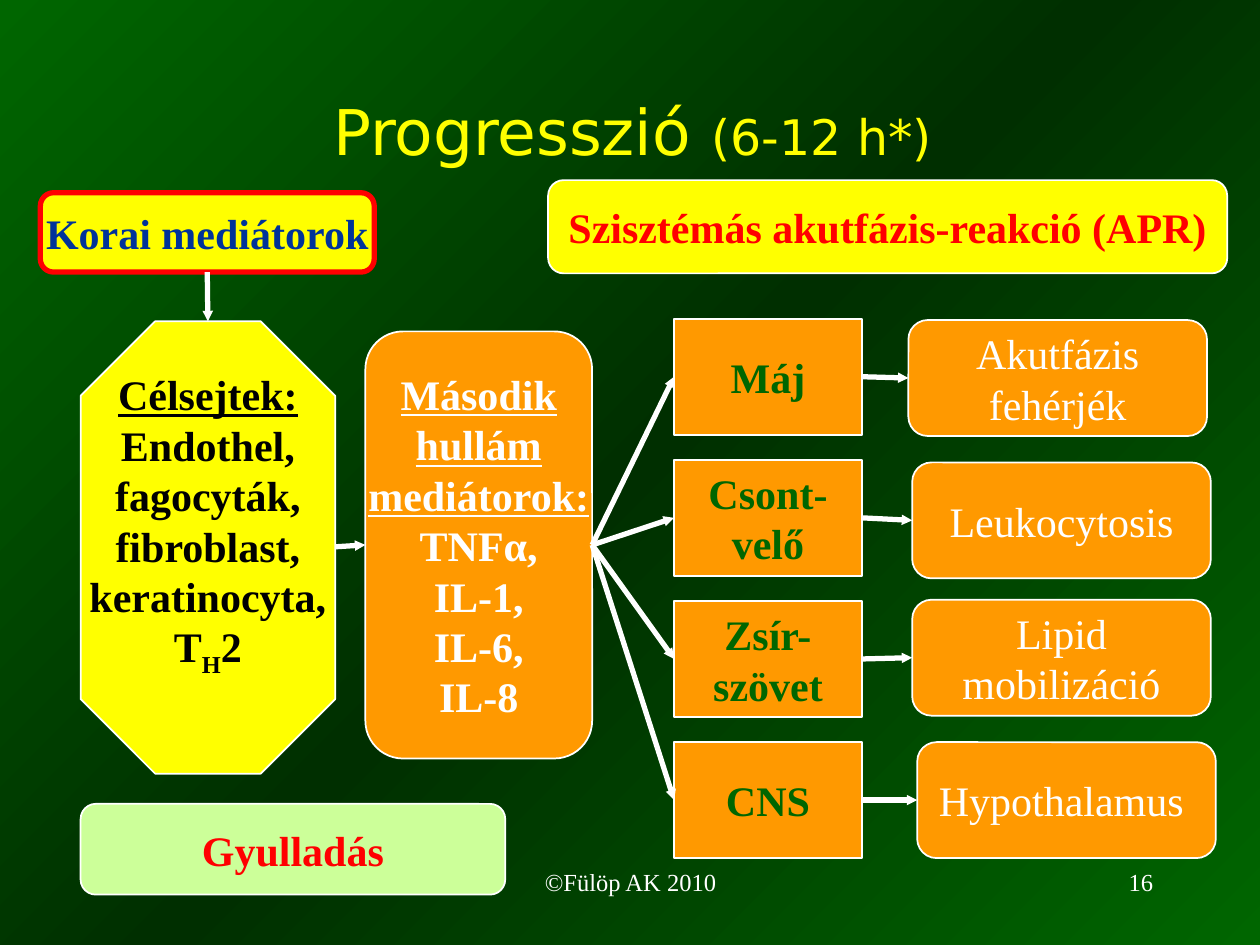
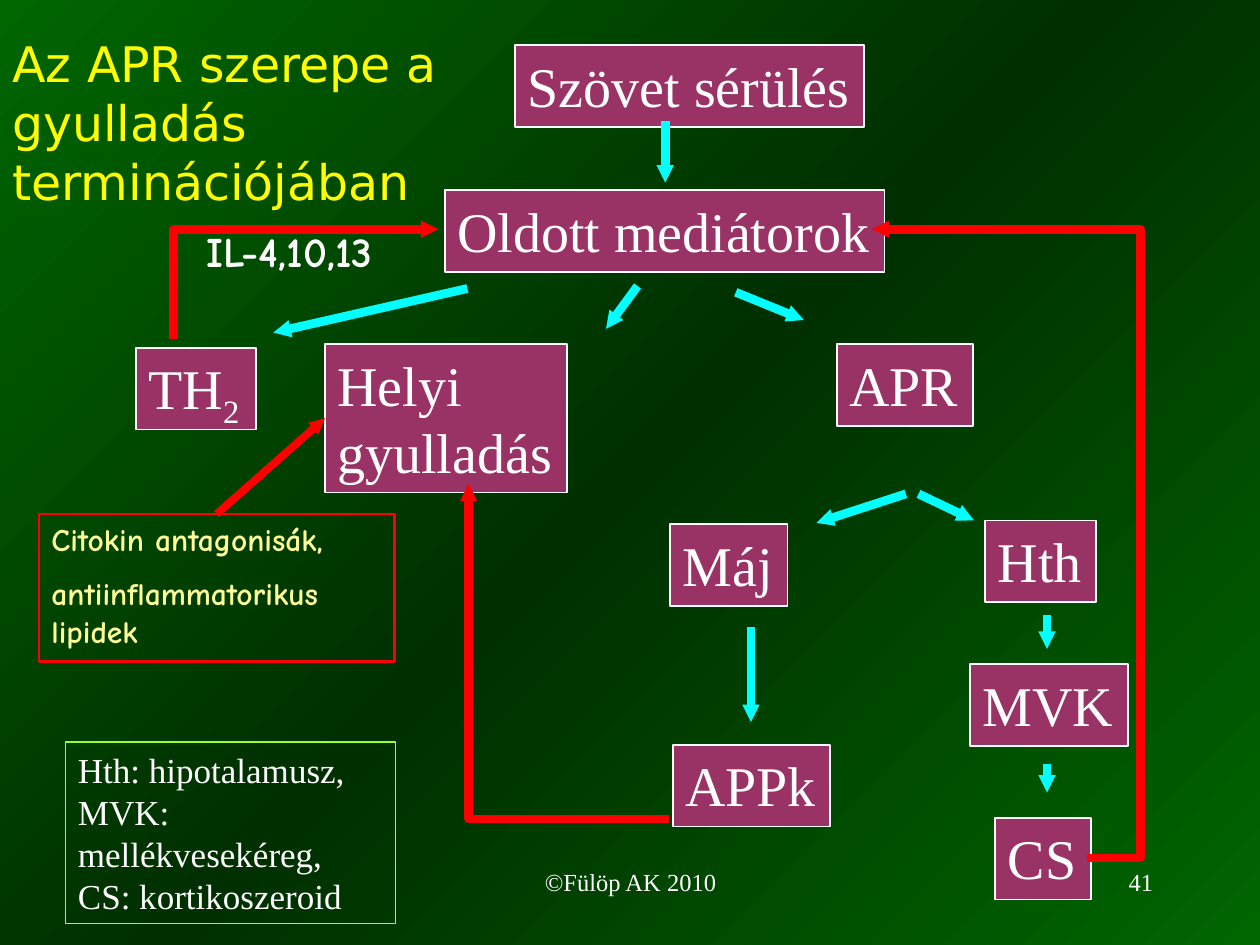
"""Build two slides on the progression and termination of the acute phase reaction."""
from copy import deepcopy
from dataclasses import dataclass, replace

from pptx import Presentation
from pptx.dml.color import RGBColor
from pptx.enum.shapes import MSO_CONNECTOR, MSO_SHAPE
from pptx.enum.text import MSO_ANCHOR, MSO_AUTO_SIZE, PP_ALIGN
from pptx.oxml.ns import qn
from pptx.oxml.xmlchemy import OxmlElement
from pptx.util import Emu, Pt

RECT, ROUND, OCTAGON = MSO_SHAPE.RECTANGLE, MSO_SHAPE.ROUNDED_RECTANGLE, MSO_SHAPE.OCTAGON
STRAIGHT, ELBOW = MSO_CONNECTOR.STRAIGHT, MSO_CONNECTOR.ELBOW
LEFT_ALIGN, CENTER, RIGHT_ALIGN = PP_ALIGN.LEFT, PP_ALIGN.CENTER, PP_ALIGN.RIGHT
TOP_ANCHOR, MIDDLE = MSO_ANCHOR.TOP, MSO_ANCHOR.MIDDLE
FIT, FIXED = MSO_AUTO_SIZE.SHAPE_TO_FIT_TEXT, MSO_AUTO_SIZE.NONE
TOP, LEFT, BOTTOM, RIGHT = range(4)
EMU_PER_PX = 9144


@dataclass(frozen=True)
class Theme:
    """Colours, fonts and type sizes of the deck."""
    green: str = "006600"
    dark_green: str = "002F00"
    yellow: str = "FFFF00"
    pale_yellow: str = "FFFF99"
    orange: str = "FF9900"
    plum: str = "993366"
    lime: str = "99FF33"
    pale_lime: str = "CCFF99"
    red: str = "FF0000"
    blue: str = "003399"
    cyan: str = "00FFFF"
    white: str = "FFFFFF"
    black: str = "000000"
    serif: str = "Times New Roman"
    sans: str = "DejaVu Sans"
    comic: str = "Comic Neue"
    title: int = 36
    subtitle: int = 28
    node: int = 32
    body: int = 24
    legend: int = 20
    note: int = 18
    footer: int = 14


THEME = Theme()


@dataclass(frozen=True)
class Style:
    """Look of a box and of the text in it."""
    size: int = THEME.body
    color: str = THEME.white
    font: str = THEME.serif
    bold: bool = False
    fill: str | None = None
    line: str | None = None
    width: float = 1
    align: PP_ALIGN = CENTER
    anchor: MSO_ANCHOR = MIDDLE
    wrap: bool = False
    fit: bool = False
    space_before: int = 0


@dataclass(frozen=True)
class Span:
    """Piece of a line with its own size or a lowered baseline."""
    text: str
    size: int | None = None
    lowered: bool = False


@dataclass(frozen=True)
class Box:
    """Text in a shape, or in a plain text box when shape is None."""
    left: int
    top: int
    width: int
    height: int
    lines: tuple
    style: Style
    shape: MSO_SHAPE | None = RECT
    underlined: int = 0
    bottom_inset: int = 5


@dataclass(frozen=True)
class Anchor:
    """Middle of one side of a drawn shape."""
    shape: object
    side: int


@dataclass(frozen=True)
class Elbow:
    """Bent arrow; upright ones leave their start vertically."""
    start: tuple[int, int]
    end: tuple[int, int]
    preset: str = "bentConnector2"
    adjust: int | None = None
    upright: bool = False


TITLE = Style(THEME.title, THEME.yellow, THEME.sans, wrap=True)
FOOTER = Style(THEME.footer, anchor=TOP_ANCHOR, wrap=True)
OUTCOME = Style(fill=THEME.orange, line=THEME.white)
WAVE = replace(OUTCOME, bold=True)
ORGAN = replace(WAVE, color=THEME.green)
CELLS = replace(WAVE, color=THEME.black, fill=THEME.yellow)
REACTION = replace(CELLS, color=THEME.red)
EARLY = replace(CELLS, color=THEME.blue, line=THEME.red, width=3)
INFLAMMATION = replace(REACTION, fill=THEME.pale_lime)
NODE = Style(THEME.node, fill=THEME.plum, line=THEME.white, align=LEFT_ALIGN,
             anchor=TOP_ANCHOR, fit=True)
CYTOKINE = Style(font=THEME.comic, bold=True, align=LEFT_ALIGN, anchor=TOP_ANCHOR, wrap=True)
ANTAGONIST = replace(CYTOKINE, size=THEME.note, color=THEME.pale_yellow,
                     line=THEME.red, width=1.5, space_before=9)
LEGEND = Style(THEME.legend, line=THEME.lime, width=0.75, align=LEFT_ALIGN,
               anchor=TOP_ANCHOR, wrap=True)


def px(length: float) -> Emu:
    """Turn px into EMU."""
    return Emu(round(length * EMU_PER_PX))


def rgb(color: str) -> RGBColor:
    """Turn a hex string into a colour."""
    return RGBColor.from_string(color)


def write_line(para, line: str | tuple, style: Style, underlined: bool) -> None:
    """Write one paragraph made of a string or of spans."""
    para.alignment = style.align
    font = para.font
    font.name, font.size, font.bold = style.font, Pt(style.size), style.bold
    font.color.rgb = rgb(style.color)
    font.underline = underlined
    for part in (Span(line),) if isinstance(line, str) else line:
        span = para.add_run()
        span.text = part.text
        if part.size:
            span.font.size = Pt(part.size)
        if part.lowered:
            span._r.get_or_add_rPr().set("baseline", "-25000")


def draw_box(page, box: Box):
    """Draw a box with its text and return the shape."""
    style = box.style
    frame = [px(n) for n in (box.left, box.top, box.width, box.height)]
    if box.shape is None:
        shape = page.shapes.add_textbox(*frame)
    else:
        shape = page.shapes.add_shape(box.shape, *frame)
        shape.shadow.inherit = False
        if style.fill:
            shape.fill.solid()
            shape.fill.fore_color.rgb = rgb(style.fill)
        else:
            shape.fill.background()
        shape.line.color.rgb = rgb(style.line)
        shape.line.width = Pt(style.width)
    text = shape.text_frame
    text.word_wrap = style.wrap
    text.auto_size = FIT if style.fit else FIXED
    text.vertical_anchor = style.anchor
    text.margin_bottom = px(box.bottom_inset)
    for index, line in enumerate(box.lines):
        para = text.add_paragraph() if index else text.paragraphs[0]
        if index and style.space_before:
            para.space_before = Pt(style.space_before)
        write_line(para, line, style, index < box.underlined)
    return shape


def finish_arrow(connector, color: str, width: float) -> None:
    """Colour a connector, give it a small arrowhead and remove its shadow."""
    connector.line.color.rgb = rgb(color)
    connector.line.width = Pt(width)
    head = OxmlElement("a:tailEnd")
    for key, value in (("type", "triangle"), ("w", "sm"), ("len", "sm")):
        head.set(key, value)
    connector.get_or_add_ln().append(head)
    connector.element.spPr.append(OxmlElement("a:effectLst"))


def draw_arrow(page, start: Anchor | tuple, end: Anchor | tuple,
               color: str = THEME.white, width: float = 3) -> None:
    """Draw a straight arrow between points or anchors."""
    points = [(0, 0) if isinstance(tip, Anchor) else tip for tip in (start, end)]
    connector = page.shapes.add_connector(STRAIGHT, *(px(n) for point in points for n in point))
    if isinstance(start, Anchor):
        connector.begin_connect(start.shape, start.side)
    if isinstance(end, Anchor):
        connector.end_connect(end.shape, end.side)
    finish_arrow(connector, color, width)


def draw_elbow(page, elbow: Elbow, color: str, width: float) -> None:
    """Draw a bent arrow, turning its frame when it is upright."""
    points = [elbow.start, elbow.end]
    if elbow.upright:
        middle_x, middle_y = (sum(pair) / 2 for pair in zip(*points))
        points = [(middle_x - (y - middle_y), middle_y + (x - middle_x)) for x, y in points]
    connector = page.shapes.add_connector(ELBOW, *(px(n) for point in points for n in point))
    properties = connector.element.spPr
    if elbow.upright:
        properties.find(qn("a:xfrm")).set("rot", "16200000")
    geometry = properties.find(qn("a:prstGeom"))
    geometry.set("prst", elbow.preset)
    if elbow.adjust is not None:
        guide = OxmlElement("a:gd")
        guide.set("name", "adj1")
        guide.set("fmla", f"val {elbow.adjust}")
        geometry.find(qn("a:avLst")).append(guide)
    finish_arrow(connector, color, width)


def add_page(deck, number: int):
    """Add a blank page with the shared gradient and footer."""
    page = deck.slides.add_slide(deck.slide_layouts[6])
    fill = page.background.fill
    fill.gradient()
    fill.gradient_angle = 315
    stops = page.element.find(f".//{qn('a:gsLst')}")
    stops.insert(1, deepcopy(stops[0]))
    colors = (THEME.green, THEME.dark_green, THEME.green)
    for index, (stop, color) in enumerate(zip(fill.gradient_stops, colors)):
        stop.position = index / 2
        stop.color.rgb = rgb(color)
    draw_box(page, Box(342, 683, 317, 50, ("©Fülöp AK 2010",), FOOTER, None))
    draw_box(page, Box(717, 683, 208, 50, (str(number),),
                       replace(FOOTER, align=RIGHT_ALIGN), None))
    return page


def build_progression(deck) -> None:
    """Build the flow from early mediators to the systemic reaction."""
    page = add_page(deck, 16)
    title = (Span("Progresszió "), Span("(6-12 h*)", THEME.subtitle))
    draw_box(page, Box(77, 41, 850, 125, (title,), TITLE, None))
    early = draw_box(page, Box(32, 153, 265, 63, ("Korai mediátorok",), EARLY, ROUND))
    cells = ("Célsejtek:", "Endothel,", "fagocyták,", "fibroblast,", "keratinocyta,",
             (Span("T"), Span("H", lowered=True), Span("2")))
    draw_box(page, Box(64, 255, 202, 359, cells, CELLS, OCTAGON, 1, 43))
    mediators = ("Második", "hullám", "mediátorok:", "TNFα,", "IL-1,", "IL-6,", "IL-8")
    wave = draw_box(page, Box(290, 263, 180, 339, mediators, WAVE, ROUND, 3))
    draw_arrow(page, Anchor(early, BOTTOM), (165, 255))
    draw_arrow(page, (266, 434), Anchor(wave, LEFT))
    draw_box(page, Box(435, 143, 539, 74, ("Szisztémás akutfázis-reakció (APR)",),
                       REACTION, ROUND))
    branches = (
        (("Máj",), ("Akutfázis", "fehérjék"), 721, 254),
        (("Csont-", "velő"), ("Leukocytosis",), 724, 367),
        (("Zsír-", "szövet"), ("Lipid", "mobilizáció"), 724, 476),
        (("CNS",), ("Hypothalamus ",), 728, 589),
    )
    for index, (organ_lines, outcome_lines, left, top) in enumerate(branches):
        organ = draw_box(page, Box(535, 253 + 112 * index, 149, 92, organ_lines, ORGAN))
        outcome = draw_box(page, Box(left, top, 237, 92, outcome_lines, OUTCOME, ROUND))
        draw_arrow(page, Anchor(wave, RIGHT), Anchor(organ, LEFT))
        draw_arrow(page, Anchor(organ, RIGHT), Anchor(outcome, LEFT))
    draw_box(page, Box(64, 638, 337, 72, ("Gyulladás",), INFLAMMATION, ROUND))


def build_termination(deck) -> None:
    """Build the feedback diagram of the acute phase reaction."""
    page = add_page(deck, 41)
    draw_box(page, Box(0, 26, 405, 142, ("Az APR szerepe a gyulladás terminációjában",),
                       replace(TITLE, size=THEME.subtitle, align=LEFT_ALIGN), None))
    nodes = (
        (532, 416, 93, "Máj"), (782, 413, 88, "Hth"), (534, 591, 125, "APPk"),
        (770, 527, 125, "MVK"), (790, 649, 76, "CS"), (409, 36, 277, "Szövet sérülés"),
        (353, 151, 349, "Oldott mediátorok"), (664, 273, 108, "APR"),
        (108, 276, 95, (Span("TH"), Span("2", lowered=True))),
    )
    for left, top, width, label in nodes:
        draw_box(page, Box(left, top, width, 65, (label,), NODE))
    local = draw_box(page, Box(258, 273, 192, 118, ("Helyi", "gyulladás"), NODE))
    steps = (
        ((719, 392), (648, 415)), ((729, 392), (773, 413)), ((596, 498), (596, 573)),
        ((831, 488), (831, 515)), ((831, 606), (831, 629)), ((528, 96), (528, 145)),
        ((371, 229), (217, 264)), ((506, 227), (481, 261)), ((584, 232), (638, 254)),
    )
    for start, end in steps:
        draw_arrow(page, start, end, THEME.cyan, 5)
    feedbacks = (
        Elbow((138, 269), (348, 182), upright=True),
        Elbow((863, 681), (692, 182), "bentConnector3", -24700),
        Elbow((531, 650), (372, 384)),
    )
    for feedback in feedbacks:
        draw_elbow(page, feedback, THEME.red, 5)
    draw_box(page, Box(154, 174, 207, 50, ("IL-4,10,13",), CYTOKINE, None))
    antagonists = draw_box(page, Box(31, 408, 282, 117, (
        "Citokin antagonisák,", "antiinflammatorikus lipidek"), ANTAGONIST))
    draw_arrow(page, Anchor(antagonists, TOP), Anchor(local, LEFT), THEME.red, 4.5)
    draw_box(page, Box(52, 589, 262, 144, (
        "Hth: hipotalamusz, MVK: mellékvesekéreg, CS: kortikoszeroid",), LEGEND))


def main() -> None:
    """Build and save the deck."""
    deck = Presentation()
    deck.slide_width, deck.slide_height = px(1000), px(750)
    build_progression(deck)
    build_termination(deck)
    deck.save("out.pptx")


if __name__ == "__main__":
    main()
